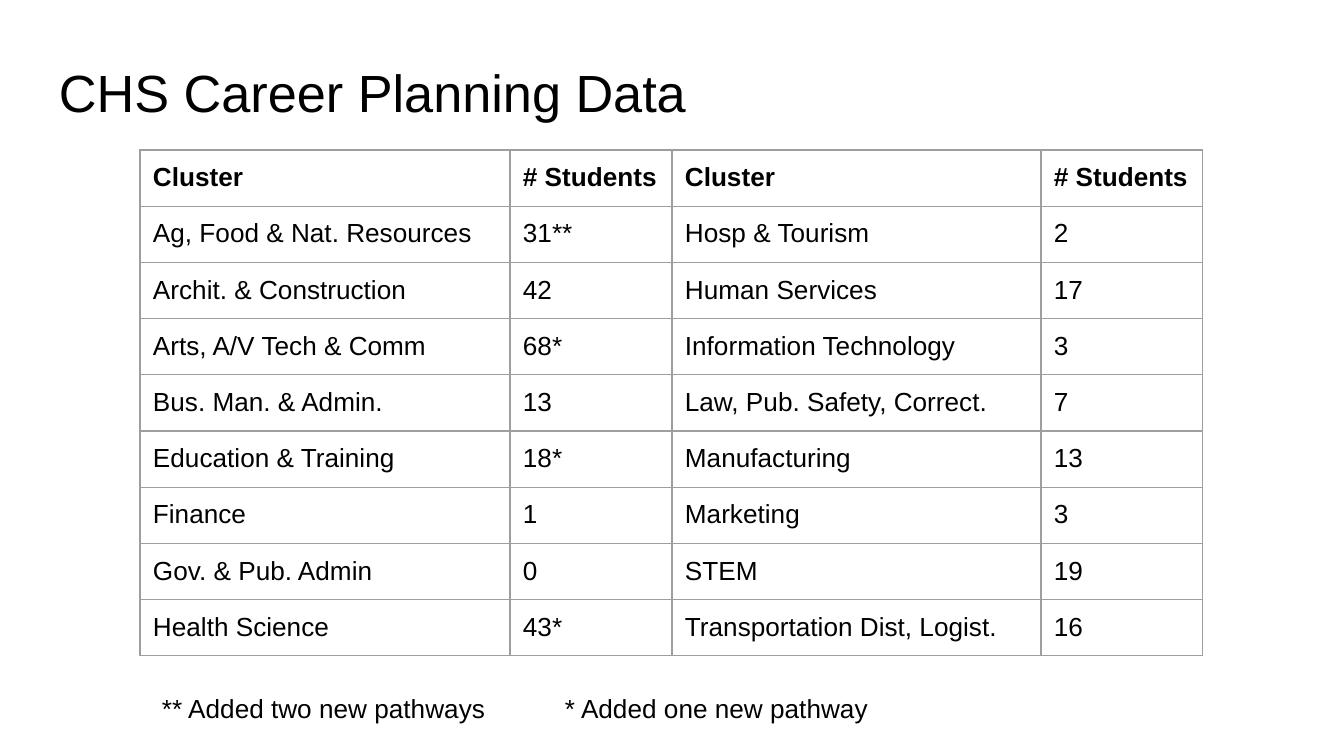
from dataclasses import dataclass

from lxml import etree
from pptx import Presentation
from pptx.dml.color import RGBColor
from pptx.enum.text import MSO_ANCHOR, MSO_AUTO_SIZE, PP_ALIGN
from pptx.oxml.ns import qn
from pptx.util import Pt

TOP = MSO_ANCHOR.TOP
LEFT = PP_ALIGN.LEFT
NO_AUTOFIT = MSO_AUTO_SIZE.NONE
TITLE_ONLY = 5
EMU_PER_PX = 914400 / 134.4


@dataclass(frozen=True)
class Theme:
    font: str = "Arial"
    text: str = "000000"
    background: str = "FFFFFF"
    border: str = "9E9E9E"
    border_width: float = 0.75
    title_size: int = 28
    body_size: int = 14
    inset: int = 13


def px(length):
    return round(length * EMU_PER_PX)


class SlideBuilder:
    def __init__(self, slide, theme):
        self.slide = slide
        self.theme = theme
        fill = slide.background.fill
        fill.solid()
        fill.fore_color.rgb = RGBColor.from_string(theme.background)

    def style(self, paragraph, size, bold=False):
        paragraph.alignment = LEFT
        font = paragraph.font
        font.name = self.theme.font
        font.size = Pt(size)
        font.bold = bold
        font.color.rgb = RGBColor.from_string(self.theme.text)

    def set_insets(self, target):
        inset = px(self.theme.inset)
        target.margin_left = target.margin_right = inset
        target.margin_top = target.margin_bottom = inset

    def fill_frame(self, shape, text, size):
        frame = shape.text_frame
        frame.text = text
        frame.word_wrap = True
        frame.auto_size = NO_AUTOFIT
        frame.vertical_anchor = TOP
        self.set_insets(frame)
        paragraph = frame.paragraphs[0]
        self.style(paragraph, size)
        return paragraph

    def title(self, text, left, top, width, height):
        heading = self.slide.shapes.title
        heading.left, heading.top = px(left), px(top)
        heading.width, heading.height = px(width), px(height)
        self.fill_frame(heading, text, self.theme.title_size)

    def tabbed_text(self, text, left, top, width, height, tab):
        box = self.slide.shapes.add_textbox(px(left), px(top), px(width), px(height))
        paragraph = self.fill_frame(box, text, self.theme.body_size)
        # The tab stop has to come before the font defaults
        tabs = etree.Element(qn("a:tabLst"))
        etree.SubElement(tabs, qn("a:tab"), pos=str(px(tab)), algn="l")
        paragraph._p.get_or_add_pPr().insert(0, tabs)

    def border(self, cell):
        properties = cell._tc.get_or_add_tcPr()
        for side in ("a:lnL", "a:lnR", "a:lnT", "a:lnB"):
            line = etree.SubElement(properties, qn(side), w=str(Pt(self.theme.border_width)))
            fill = etree.SubElement(line, qn("a:solidFill"))
            etree.SubElement(fill, qn("a:srgbClr"), val=self.theme.border)

    def table(self, rows, left, top, column_widths, height):
        grid = self.slide.shapes.add_table(
            len(rows), len(column_widths), px(left), px(top),
            px(sum(column_widths)), px(height)).table
        grid.first_row = grid.horz_banding = False
        for column, width in zip(grid.columns, column_widths):
            column.width = px(width)
        for r, values in enumerate(rows):
            grid.rows[r].height = px(height / len(rows))
            for c, value in enumerate(values):
                cell = grid.cell(r, c)
                cell.text = value
                cell.vertical_anchor = TOP
                self.set_insets(cell)
                self.style(cell.text_frame.paragraphs[0], self.theme.body_size, bold=r == 0)
                self.border(cell)
                cell.fill.background()


HEADER = ("Cluster", "# Students") * 2
CLUSTERS = [
    ("Ag, Food & Nat. Resources", "31**", "Hosp & Tourism", "2"),
    ("Archit. & Construction", "42", "Human Services", "17"),
    ("Arts, A/V Tech & Comm", "68*", "Information Technology", "3"),
    ("Bus. Man. & Admin.", "13", "Law, Pub. Safety, Correct.", "7"),
    ("Education & Training", "18*", "Manufacturing", "13"),
    ("Finance", "1", "Marketing", "3"),
    ("Gov. & Pub. Admin", "0", "STEM", "19"),
    ("Health Science", "43*", "Transportation Dist, Logist.", "16"),
]


def main():
    deck = Presentation()
    deck.slide_width, deck.slide_height = px(1344), px(756)
    slide = deck.slides.add_slide(deck.slide_layouts[TITLE_ONLY])
    builder = SlideBuilder(slide, Theme())

    # Title
    builder.title("CHS Career Planning Data", 46, 47, 1252, 85)

    # Students per career cluster
    builder.table([HEADER, *CLUSTERS], 140, 150, (370, 162, 369, 162), 506)

    # Key to the asterisks
    builder.tabbed_text("** Added two new pathways\t* Added one new pathway",
                        149, 679, 961, 50, tab=403)

    deck.save("out.pptx")


if __name__ == "__main__":
    main()
